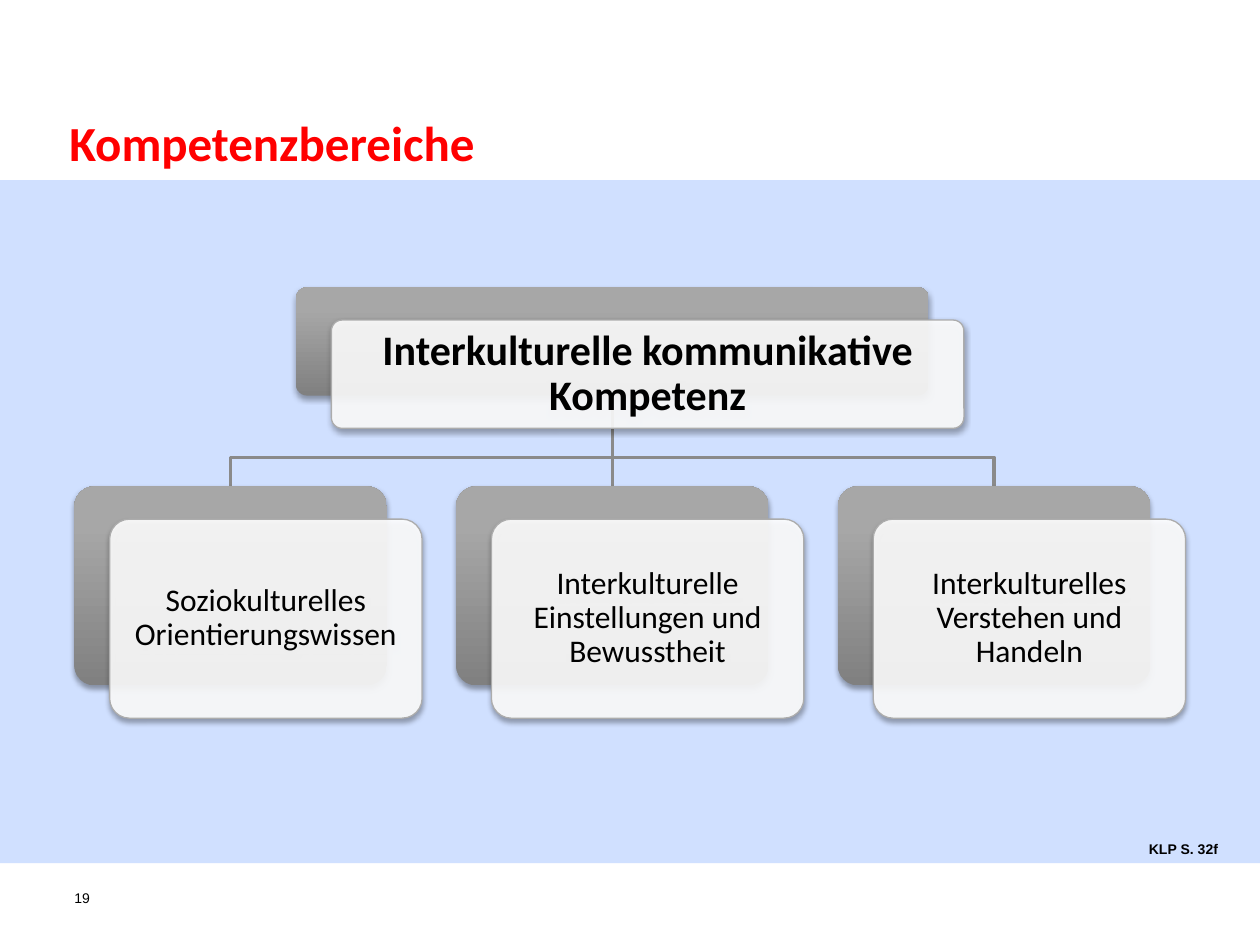
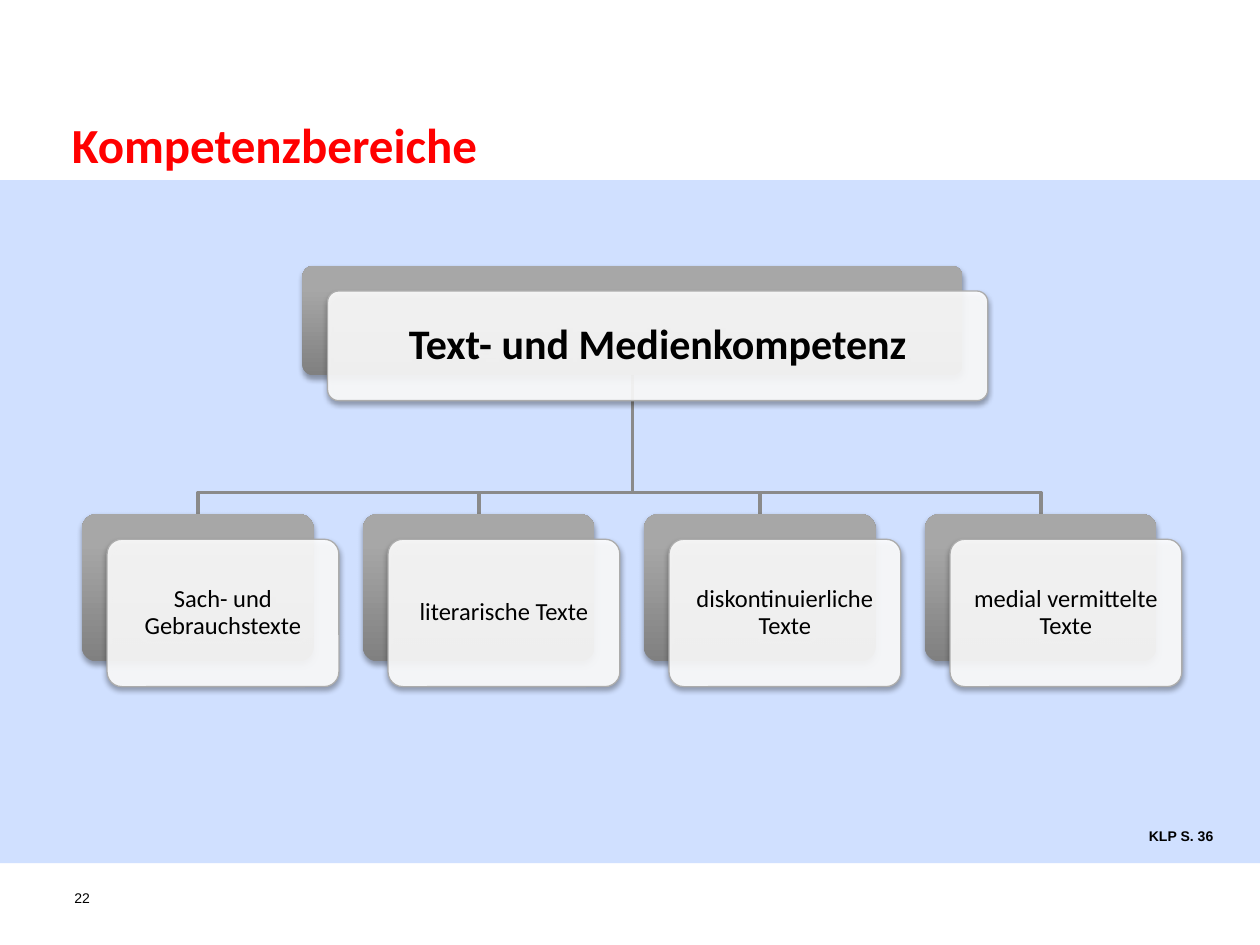
"""Build two slides that show areas of competence as hierarchy charts."""
from lxml import etree
from pptx import Presentation
from pptx.dml.color import RGBColor
from pptx.enum.shapes import MSO_CONNECTOR, MSO_SHAPE
from pptx.enum.text import MSO_ANCHOR, MSO_AUTO_SIZE, PP_ALIGN
from pptx.oxml import parse_xml
from pptx.oxml.ns import nsdecls, qn
from pptx.util import Inches, Pt

TITLE = "Kompetenzbereiche"
CHARTS = [
    {
        "title_at": (0.55, 0.89), "number": "19",
        "source": "KLP S. 32f", "source_top": 6.62,
        "root": "Interkulturelle kommunikative Kompetenz",
        "root_at": (2.35, 2.28, 5.02, 0.86),
        "children": ["Soziokulturelles Orientierungswissen",
                     "Interkulturelle Einstellungen und Bewusstheit",
                     "Interkulturelles Verstehen und Handeln"],
        "first_child_at": (0.59, 3.86, 2.48, 1.58), "pitch": 3.03,
        "offset": (0.28, 0.26), "bus": 3.63, "child_size": 18, "child_inset": 0.07,
    },
    {
        "title_at": (0.57, 0.91), "number": "22",
        "source": "KLP S. 36", "source_top": 6.52,
        "root": "Text- und Medienkompetenz",
        "root_at": (2.4, 2.11, 5.24, 0.87),
        "children": ["Sach- und Gebrauchstexte", "literarische Texte",
                     "diskontinuierliche Texte", "medial vermittelte Texte"],
        "first_child_at": (0.65, 4.08, 1.84, 1.17), "pitch": 2.23,
        "offset": (0.2, 0.2), "bus": 3.91, "child_size": 14, "child_inset": 0.06,
    },
]

BLACK, RED, WHITE = "000000", "FF0000", "FFFFFF"
BAND, BRANCH, CARD_EDGE = "6699FF", "8A8A8A", "ACACAC"
PLATE_STOPS = [(0, "808080"), (80, "A7A7A7"), (100, "A7A7A7")]


def color(value):
    return RGBColor.from_string(value)


def inches(values):
    return [Inches(value) for value in values]


def write(box, text, font="Calibri", size=18, bold=False, ink=BLACK, inset=(0, 0),
          align=PP_ALIGN.LEFT, anchor=MSO_ANCHOR.TOP, wrap=True, spacing=None):
    frame = box.text_frame
    frame.word_wrap = wrap
    frame.auto_size = MSO_AUTO_SIZE.NONE if wrap else MSO_AUTO_SIZE.SHAPE_TO_FIT_TEXT
    frame.vertical_anchor = anchor
    frame.margin_left = frame.margin_right = Inches(inset[0])
    frame.margin_top = frame.margin_bottom = Inches(inset[1])
    para = frame.paragraphs[0]
    para.alignment = align
    para.line_spacing = spacing
    span = para.add_run()
    span.text = text
    span.font.name, span.font.size, span.font.bold = font, Pt(size), bold
    span.font.color.rgb = color(ink)


def add_block(page, shape_type, place, fill=None, opacity=100):
    block = page.shapes.add_shape(shape_type, *inches(place))
    block.shadow.inherit = False
    block.line.fill.background()
    if fill:
        block.fill.solid()
        block.fill.fore_color.rgb = color(fill)
        tint = block.fill._xPr.find(qn("a:solidFill"))[0]
        etree.SubElement(tint, qn("a:alpha")).set("val", str(opacity * 1000))
    return block


def add_shadow(block):
    effects = block._element.spPr.find(qn("a:effectLst"))
    effects.append(parse_xml(
        f'<a:outerShdw {nsdecls("a")} blurRad="40000" dist="23000" dir="5400000" '
        f'rotWithShape="0"><a:srgbClr val="{BLACK}"><a:alpha val="35000"/>'
        '</a:srgbClr></a:outerShdw>'))


def shade(block):
    block.fill.gradient()
    stops = "".join(f'<a:gs pos="{position * 1000}"><a:srgbClr val="{value}"/></a:gs>'
                    for position, value in PLATE_STOPS)
    properties = block._element.spPr
    properties.replace(properties.find(qn("a:gradFill")), parse_xml(
        f'<a:gradFill {nsdecls("a")} rotWithShape="1"><a:gsLst>{stops}</a:gsLst>'
        '<a:lin ang="16200000" scaled="0"/></a:gradFill>'))


def add_card(page, text, place, offset, inset, **style):
    left, top, width, height = place
    plate = add_block(page, MSO_SHAPE.ROUNDED_RECTANGLE, place)
    shade(plate)
    card = add_block(page, MSO_SHAPE.ROUNDED_RECTANGLE,
                     (left + offset[0], top + offset[1], width, height), WHITE, 90)
    card.line.color.rgb = color(CARD_EDGE)
    card.line.width = Pt(0.75)
    for block in (plate, card):
        block.adjustments[0] = 0.1
        add_shadow(block)
    write(card, text, inset=(inset, inset), align=PP_ALIGN.CENTER,
          anchor=MSO_ANCHOR.MIDDLE, spacing=0.9, **style)


def add_branch(page, start, bus, end):
    if abs(start[0] - end[0]) < 0.02:
        branch = page.shapes.add_connector(MSO_CONNECTOR.STRAIGHT, *inches(start + end))
        etree.SubElement(branch._element.spPr, qn("a:effectLst"))
    else:
        corners = [(start[0], bus), (end[0], bus), end]
        builder = page.shapes.build_freeform(*inches(start))
        builder.add_line_segments([inches(corner) for corner in corners], close=False)
        branch = builder.convert_to_shape()
        branch.fill.background()
        branch.shadow.inherit = False
    branch.line.color.rgb = color(BRANCH)
    branch.line.width = Pt(2)


def add_frame(page, chart):
    add_block(page, MSO_SHAPE.RECTANGLE, (0, 1.43, 10, 5.42), BAND, 30)
    title = page.shapes.title
    title.left, title.top, title.width, title.height = inches(chart["title_at"] + (8.82, 0.47))
    write(title, TITLE, size=28, bold=True, ink=RED, anchor=MSO_ANCHOR.MIDDLE)
    number = page.shapes.add_textbox(*inches((0.59, 7.06, 0.32, 0.37)))
    write(number, chart["number"], font="Arial", size=8)
    source = page.shapes.add_textbox(*inches((9.02, chart["source_top"], 0.77, 0.24)))
    write(source, chart["source"], font="Arial", size=8, bold=True,
          inset=(0.1, 0.05), wrap=False)


def add_hierarchy(page, chart):
    left, top, width, height = chart["root_at"]
    trunk = (left + width / 2, top + height)
    first, child_top, child_width, child_height = chart["first_child_at"]
    lefts = [first + chart["pitch"] * column for column in range(len(chart["children"]))]
    for child_left in lefts:
        add_branch(page, trunk, chart["bus"], (child_left + child_width / 2, child_top))
    add_card(page, chart["root"], chart["root_at"], chart["offset"], 0.1, size=24, bold=True)
    for text, child_left in zip(chart["children"], lefts):
        add_card(page, text, (child_left, child_top, child_width, child_height),
                 chart["offset"], chart["child_inset"], size=chart["child_size"])


def main():
    deck = Presentation()
    deck.slide_width, deck.slide_height = inches((10, 7.5))
    for chart in CHARTS:
        page = deck.slides.add_slide(deck.slide_layouts[5])
        add_frame(page, chart)
        add_hierarchy(page, chart)
    deck.save("out.pptx")


if __name__ == "__main__":
    main()
